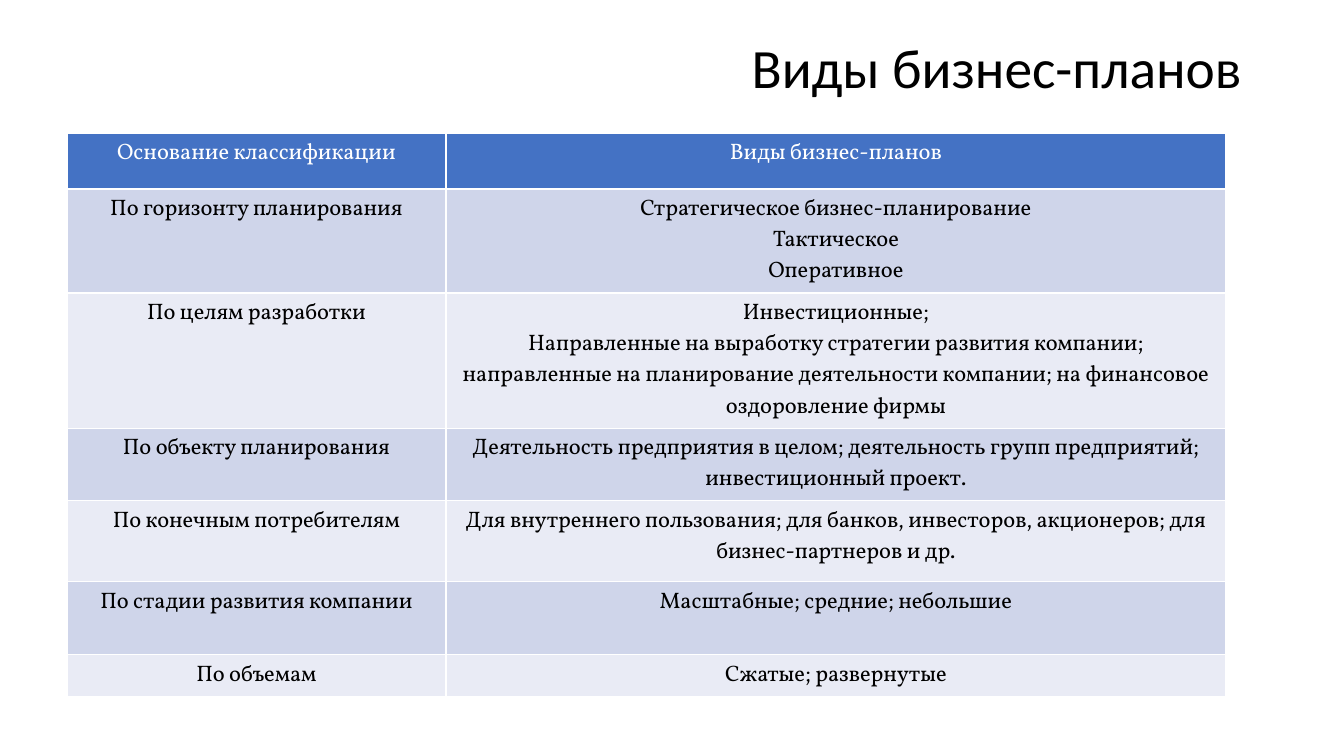
from pptx import Presentation, util as u
from pptx.dml.color import RGBColor
from pptx.enum import text

PX = 914400 / 100.8
COLORS = {"ink": "000000", "paper": "FFFFFF", "header": "4472C4",
          "odd": "CFD5EA", "even": "E9EBF5"}

COLUMN_WIDTHS = [379, 780]
ROWS = [
    (56, "Основание классификации", "Виды бизнес-планов"),
    (81, "По горизонту планирования",
     "Стратегическое бизнес-планирование\nТактическое\nОперативное"),
    (128, "По целям разработки",
     "Инвестиционные;\nНаправленные на выработку стратегии развития компании; "
     "направленные на планирование деятельности компании; "
     "на финансовое оздоровление фирмы"),
    (56, "По объекту планирования",
     "Деятельность предприятия в целом; деятельность групп предприятий; "
     "инвестиционный проект."),
    (81, "По конечным потребителям",
     "Для внутреннего пользования; для банков, инвесторов, акционеров; "
     "для бизнес-партнеров и др."),
    (73, "По стадии развития компании", "Масштабные; средние; небольшие"),
    (36, "По объемам", "Сжатые; развернутые"),
]


def px(length):
    return u.Emu(round(length * PX))


def apply(target, values):
    for name, value in values.items():
        setattr(target, name, value)


class SlideBuilder:
    title_font = {"name": "Calibri", "size": u.Pt(39.6), "bold": False}
    cell_font = {"name": "Vollkorn", "size": u.Pt(16), "bold": False}

    def __init__(self, deck):
        self.page = deck.slides.add_slide(deck.slide_layouts[5])

    def color(self, name):
        return RGBColor.from_string(COLORS[name])

    def fill_text(self, frame, content, font, color, **layout):
        frame.text = content
        for para in frame.paragraphs:
            apply(para, layout)
            for span in para.runs:
                apply(span.font, font)
                span.font.color.rgb = self.color(color)

    def title(self, content, left, top, width, height):
        box = self.page.shapes.title
        apply(box, {"left": px(left), "top": px(top),
                    "width": px(width), "height": px(height)})
        apply(box.text_frame, {"word_wrap": True,
                               "auto_size": text.MSO_AUTO_SIZE.NONE,
                               "vertical_anchor": text.MSO_ANCHOR.MIDDLE})
        self.fill_text(box.text_frame, content, self.title_font, "ink",
                       alignment=text.PP_ALIGN.RIGHT, line_spacing=0.9)

    def table(self, rows, widths, left, top):
        """Draw a header row followed by rows in two alternating tints."""
        height = sum(row[0] for row in rows)
        table = self.page.shapes.add_table(
            len(rows), len(widths), px(left), px(top),
            px(sum(widths)), px(height)).table
        for column, width in zip(table.columns, widths):
            column.width = px(width)
        for index, (row_height, *contents) in enumerate(rows):
            table.rows[index].height = px(row_height)
            fill = "header" if index == 0 else ("even", "odd")[index % 2]
            ink = "paper" if index == 0 else "ink"
            for cell, content in zip(table.rows[index].cells, contents):
                cell.fill.solid()
                cell.fill.fore_color.rgb = self.color(fill)
                self.fill_text(cell.text_frame, content, self.cell_font, ink,
                               alignment=text.PP_ALIGN.CENTER)


def main():
    deck = Presentation()
    apply(deck, {"slide_width": px(1344), "slide_height": px(756)})
    slide = SlideBuilder(deck)
    slide.title("Виды бизнес-планов", 206, 40, 1046, 62)
    slide.table(ROWS, COLUMN_WIDTHS, 67, 133)
    deck.save("out.pptx")


if __name__ == "__main__":
    main()
